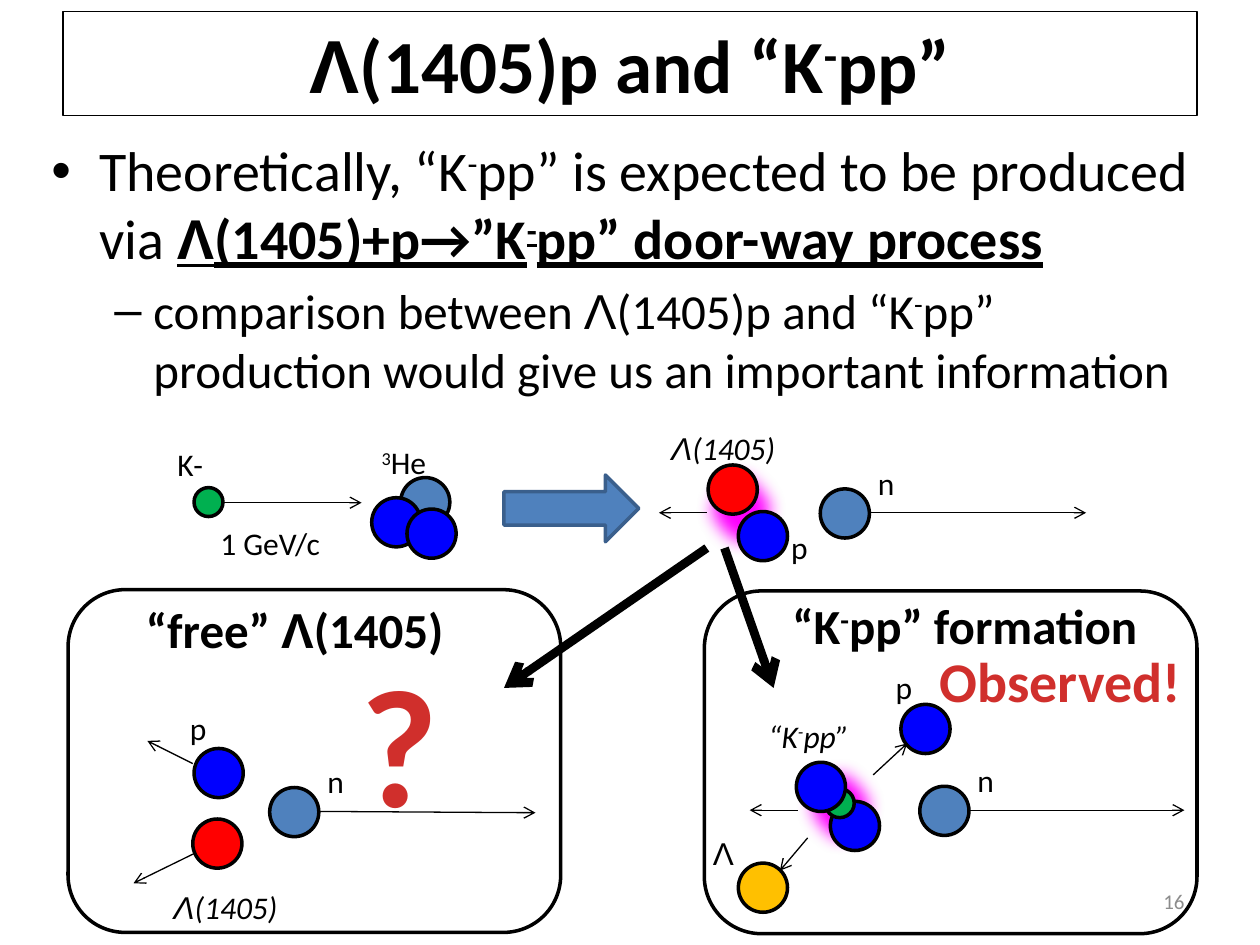
"""Build the slide on Λ(1405)p and “K-pp” production."""
from lxml.etree import SubElement
from pptx import Presentation
from pptx.dml.color import RGBColor
from pptx.enum.shapes import MSO_CONNECTOR, MSO_SHAPE
from pptx.enum.text import MSO_ANCHOR, PP_ALIGN
from pptx.oxml.ns import qn
from pptx.util import Inches, Pt

BLACK, BLUE, STEEL = "000000", "0000FF", "4F81BD"
RED, GREEN, GOLD, CRIMSON = "FF0000", "00B050", "FFC000", "D02F2C"


def tint(hue):
    """Turn a hex string into a colour."""
    return RGBColor.from_string(hue)


def write(para, size, hue, runs):
    """Add runs; marks: a Arial, b bold, i italic, u underline, s superscript."""
    for text, marks in runs:
        run = para.add_run()
        run.text = text
        font = run.font
        font.size = Pt(size)
        font.name = "Arial" if "a" in marks else "Calibri"
        font.bold = "b" in marks
        font.italic = "i" in marks
        font.underline = "u" in marks
        font.color.rgb = tint(hue)
        if "s" in marks:
            run._r.get_or_add_rPr().set("baseline", "30000")


deck = Presentation()
deck.slide_width, deck.slide_height = Inches(10), Inches(7.5)
slide = deck.slides.add_slide(deck.slide_layouts[6])
shapes = slide.shapes

# left, top, width, height
body = shapes.add_textbox(Inches(0.31), Inches(1.03), Inches(9.3), Inches(2.95))
frame = body.text_frame
frame.word_wrap = True
points = [
    (32, 0.38, 0.38, "•", [
        ("Theoretically, “K", ""), ("-", "s"),
        ("pp” is expected to be produced via ", ""), ("Λ", "abu"),
        ("(1405)+p→”K", "bu"), ("-", "bus"), ("pp” door-way process", "bu")]),
    (28, 0.81, 0.31, "–", [
        ("comparison between ", ""), ("Λ", "a"), ("(1405)p and “K", ""), ("-", "s"),
        ("pp” production would give us an important information", "")]),
]
for level, (size, left, hang, mark, runs) in enumerate(points):
    para = frame.add_paragraph() if level else frame.paragraphs[0]
    para.level = level
    if level:
        para.space_before = Pt(size * 0.2)
    props = para._p.get_or_add_pPr()
    props.set("marL", str(Inches(left)))
    props.set("indent", str(-Inches(hang)))
    SubElement(props, qn("a:buFont")).set("typeface", "Arial")
    SubElement(props, qn("a:buChar")).set("char", mark)
    write(para, size, BLACK, runs)

for left, top in [(5.49, 3.61), (6.28, 5.97)]:
    glow = shapes.add_shape(MSO_SHAPE.OVAL, Inches(left), Inches(top),
                            Inches(0.78), Inches(0.86))
    glow.fill.solid()
    glow.fill.fore_color.rgb = tint("FF00FF")
    glow.line.fill.background()
    effects = SubElement(glow._element.spPr, qn("a:effectLst"))
    SubElement(effects, qn("a:softEdge")).set("rad", str(Inches(0.14)))

big, small = 0.39, 0.23
balls = [
    (2.14, 6.25, big, STEEL), (1.54, 5.94, big, BLUE), (1.53, 6.5, big, RED),
    (3.18, 3.79, big, STEEL), (2.95, 3.95, big, BLUE), (3.23, 4.04, big, BLUE),
    (1.54, 3.87, small, GREEN), (6.51, 3.88, big, STEEL),
    (5.86, 4.06, big, BLUE), (5.62, 3.69, big, RED),
    (7.3, 6.24, big, STEEL), (6.59, 6.36, big, BLUE), (6.55, 6.26, small, GREEN),
    (5.86, 6.85, big, GOLD), (7.15, 5.59, big, BLUE), (6.32, 6.05, big, BLUE),
]
oval, panel = MSO_SHAPE.OVAL, MSO_SHAPE.ROUNDED_RECTANGLE
forms = [(oval, x, y, d, d, hue, BLACK, 2) for x, y, d, hue in balls] + [
    (MSO_SHAPE.RIGHT_ARROW, 4, 3.77, 1.07, 0.53, STEEL, "3A5F8C", 2),
    (panel, 0.54, 4.68, 3.91, 2.72, None, BLACK, 2),
    (panel, 5.59, 4.69, 3.91, 2.72, None, BLACK, 2),
    (MSO_SHAPE.RECTANGLE, 0.5, 0.09, 9, 0.83, None, BLACK, 0.75),
]
for kind, left, top, width, height, hue, edge, weight in forms:
    form = shapes.add_shape(kind, Inches(left), Inches(top), Inches(width), Inches(height))
    form.shadow.inherit = False
    if hue:
        form.fill.solid()
        form.fill.fore_color.rgb = tint(hue)
    else:
        form.fill.background()
    form.line.color.rgb = tint(edge)
    form.line.width = Pt(weight)

title = form.text_frame
title.word_wrap = True
title.vertical_anchor = MSO_ANCHOR.MIDDLE
title.paragraphs[0].alignment = PP_ALIGN.CENTER
write(title.paragraphs[0], 42.9, BLACK,
      [("Λ", "ab"), ("(1405)p and “K", "b"), ("-", "bs"), ("pp”", "b")])

arrows = [
    (2.53, 6.44, 4.25, 6.45, 0.75), (1.53, 6.06, 1.17, 5.88, 0.75),
    (1.55, 6.77, 1.06, 7.01, 0.75), (1.78, 3.99, 2.87, 3.99, 0.75),
    (6.9, 4.07, 8.62, 4.07, 0.75), (5.61, 4.07, 5.23, 4.07, 0.75),
    (7.69, 6.43, 9.4, 6.43, 0.75), (6.41, 6.65, 6.19, 6.91, 0.75),
    (6.93, 6.15, 7.2, 5.9, 0.75), (6.33, 6.43, 5.95, 6.43, 0.75),
    (5.61, 4.35, 4, 5.46, 5), (5.75, 4.35, 6.14, 5.46, 5),
]
for *ends, weight in arrows:
    arrow = shapes.add_connector(MSO_CONNECTOR.STRAIGHT, *[Inches(end) for end in ends])
    arrow.line.color.rgb = tint(BLACK)
    arrow.line.width = Pt(weight)
    SubElement(arrow.line._get_or_add_ln(), qn("a:tailEnd")).set("type", "arrow")
    SubElement(arrow._element.spPr, qn("a:effectLst"))

lambda_runs = [("Λ", "ai"), ("(1405)", "i")]
labels = [
    (2.5, 6, 0.34, 0.4, 18, BLACK, [("n", "")]),
    (1.28, 7, 1.04, 0.4, 18, BLACK, lambda_runs),
    (1.41, 5.58, 0.34, 0.4, 18, BLACK, [("p", "")]),
    (6.19, 4.68, 2.98, 0.57, 28, BLACK, [("“K", "b"), ("-", "bs"), ("pp” formation", "b")]),
    (1.06, 4.71, 2.61, 0.57, 28, BLACK, [("“free” ", "b"), ("Λ", "ab"), ("(1405)", "b")]),
    (1.31, 3.48, 0.41, 0.4, 18, BLACK, [("K-", "")]),
    (6.87, 3.63, 0.34, 0.4, 18, BLACK, [("n", "")]),
    (2.93, 3.47, 0.57, 0.4, 18, BLACK, [("3", "s"), ("He", "")]),
    (5.23, 3.36, 1.04, 0.4, 18, BLACK, lambda_runs),
    (1.65, 4.11, 1, 0.4, 18, BLACK, [("1 GeV/c", "")]),
    (6.18, 4.14, 0.34, 0.4, 18, BLACK, [("p", "")]),
    (7.66, 5.99, 0.34, 0.4, 18, BLACK, [("n", "")]),
    (6, 5.64, 0.88, 0.4, 18, BLACK, [("“K", "i"), ("-", "is"), ("pp”", "i")]),
    (5.56, 6.57, 0.38, 0.4, 18, BLACK, [("Λ", "a")]),
    (7.01, 5.25, 0.34, 0.4, 18, BLACK, [("p", "")]),
    (2.76, 5.03, 0.83, 1.72, 96, CRIMSON, [("?", "b")]),
    (7.36, 5.08, 2.13, 0.64, 32, CRIMSON, [("Observed!", "b")]),
    (7.17, 6.95, 2.33, 0.4, 12, "8C8C8C", [("16", "")]),
]
for left, top, width, height, size, hue, runs in labels:
    label = shapes.add_textbox(Inches(left), Inches(top), Inches(width), Inches(height))
    frame = label.text_frame
    frame.word_wrap = False
    write(frame.paragraphs[0], size, hue, runs)

frame.word_wrap = True
frame.vertical_anchor = MSO_ANCHOR.MIDDLE
frame.paragraphs[0].alignment = PP_ALIGN.RIGHT

deck.save("out.pptx")
